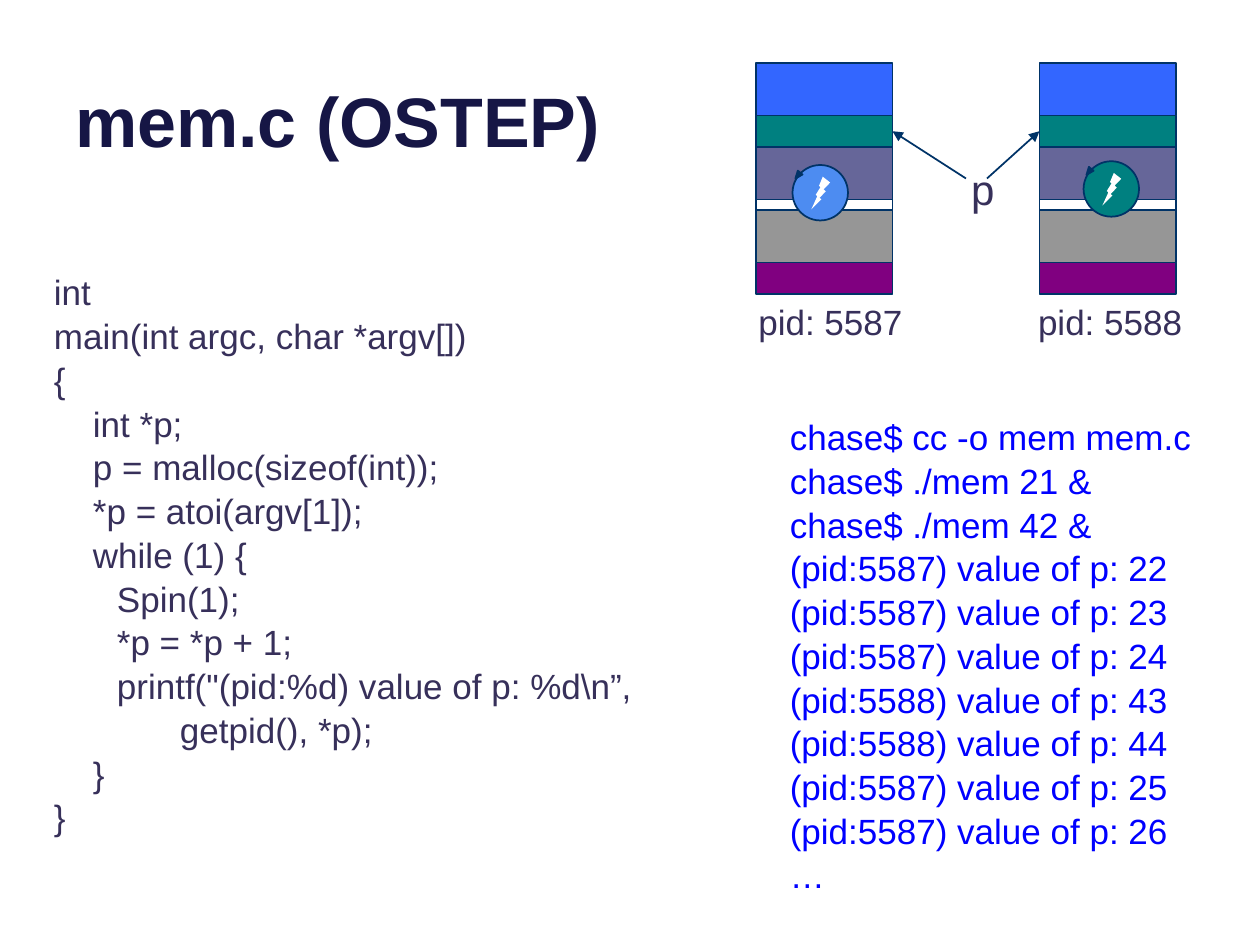
from lxml.etree import SubElement
from pptx import Presentation
from pptx.dml.color import RGBColor
from pptx.enum.shapes import MSO_CONNECTOR, MSO_SHAPE
from pptx.enum.text import MSO_ANCHOR, MSO_AUTO_SIZE
from pptx.oxml.ns import qn
from pptx.util import Inches, Pt

WHITE = RGBColor(0xFF, 0xFF, 0xFF)
TITLE_NAVY = RGBColor(0x16, 0x16, 0x45)
TEXT_PURPLE = RGBColor(0x37, 0x30, 0x5A)
OUTPUT_BLUE = RGBColor(0x00, 0x00, 0xFF)
OUTLINE = RGBColor(0x00, 0x33, 0x67)
BLUE = RGBColor(0x33, 0x66, 0xFF)
TEAL = RGBColor(0x00, 0x80, 0x80)
SLATE = RGBColor(0x66, 0x66, 0x99)
GREY = RGBColor(0x96, 0x96, 0x96)
PURPLE = RGBColor(0x80, 0x00, 0x80)
SKY = RGBColor(0x4D, 0x8C, 0xF1)

CELL = 1 / 12  # the diagram's grid, in inches
SEGMENTS = [(5, BLUE), (3, TEAL), (5, SLATE), (1, WHITE), (5, GREY), (3, PURPLE)]
HEAP = 1  # index of the segment that p points to

TITLE = {"size": Pt(40), "bold": True}
BODY = {"size": Pt(20)}
POINTER = {"size": Pt(24)}

CODE = [  # left indent in inches, text
    (0, "int"),
    (0, "main(int argc, char *argv[])"),
    (0, "{"),
    (0.31, "int *p;"),
    (0.31, "p = malloc(sizeof(int));"),
    (0.31, "*p = atoi(argv[1]);"),
    (0.31, "while (1) {"),
    (0.5, "Spin(1);"),
    (0.5, "*p = *p + 1;"),
    (0.5, "printf(\"(pid:%d) value of p: %d\\n”,"),
    (1, "getpid(), *p);"),
    (0.31, "}"),
    (0, "}"),
]
COMMANDS = ["cc -o mem mem.c", "./mem 21 &", "./mem 42 &"]
VALUES = [(5587, 22), (5587, 23), (5587, 24), (5588, 43), (5588, 44), (5587, 25), (5587, 26)]
OUTPUT = [
    *((0, f"chase$ {command}") for command in COMMANDS),
    *((0, f"(pid:{pid}) value of p: {value}") for pid, value in VALUES),
    (0, "…"),
]


def add_text(page, box, lines, style, color, wrap=True, anchor=MSO_ANCHOR.TOP):
    """Write (indent, text) lines, one paragraph each."""
    frame = page.shapes.add_textbox(*map(Inches, box)).text_frame
    layout = {
        "word_wrap": wrap,
        "vertical_anchor": anchor,
        "auto_size": MSO_AUTO_SIZE.NONE if wrap else MSO_AUTO_SIZE.SHAPE_TO_FIT_TEXT,
    }
    for name, value in layout.items():
        setattr(frame, name, value)
    for index, (indent, text) in enumerate(lines):
        para = frame.add_paragraph() if index else frame.paragraphs[0]
        para.space_before = Pt(1)
        if indent:
            para._p.get_or_add_pPr().set("marL", str(Inches(indent)))
        span = para.add_run()
        span.text = text
        for name, value in {"name": "Arial", **style}.items():
            setattr(span.font, name, value)
        span.font.color.rgb = color


def add_figure(shapes, kind, box, fill, outlined=True):
    figure = shapes.add_shape(kind, *map(Inches, box))
    figure.shadow.inherit = False
    figure.fill.solid()
    figure.fill.fore_color.rgb = fill
    if outlined:
        figure.line.color.rgb = OUTLINE
        figure.line.width = Pt(1)
    else:
        figure.line.fill.background()
    return figure


def add_memory(page, box):
    """Stack the segments in the box and return the heap segment."""
    left, top, width, height = box
    row = height / sum(rows for rows, _ in SEGMENTS)
    segments = []
    for rows, color in SEGMENTS:
        part = (left, top, width, rows * row)
        segments.append(add_figure(page.shapes, MSO_SHAPE.FLOWCHART_PROCESS, part, color))
        top += rows * row
    return segments[HEAP]


def add_thread(page, box, color):
    """Draw a running thread: a disc with a bolt and a rotation arrowhead."""
    left, top, size, _ = box
    shapes = page.shapes.add_group_shape().shapes

    def place(x, y, width, height):
        return left + x * size, top + y * size, width * size, height * size

    add_figure(shapes, MSO_SHAPE.OVAL, box, color)
    bolt = add_figure(shapes, MSO_SHAPE.LIGHTNING_BOLT, place(0.34, 0.21, 0.34, 0.59), WHITE, False)
    bolt._element.spPr.find(qn("a:xfrm")).set("flipH", "1")
    head = add_figure(shapes, MSO_SHAPE.ISOSCELES_TRIANGLE, place(0.04, 0.12, 0.11, 0.14), OUTLINE)
    head.rotation = 219


def add_arrow(page, start, target, site):
    arrow = page.shapes.add_connector(MSO_CONNECTOR.STRAIGHT, *map(Inches, start * 2))
    arrow.end_connect(target, site)
    arrow.line.color.rgb = OUTLINE
    arrow.line.width = Pt(1)
    properties = arrow._element.spPr
    SubElement(properties.find(qn("a:ln")), qn("a:tailEnd"), type="triangle")
    SubElement(properties, qn("a:effectLst"))


def add_processes(page, box):
    """Draw two address spaces side by side, with p pointing into both heaps."""
    left, top, width, height = box
    column = 13 * CELL
    processes = [  # memory left, thread offset, thread colour, label offset, pid, arrow start, site
        (left, (0.29, 0.81), SKY, -0.08, 5587, 20, 3),
        (left + width - column, (0.35, 0.78), TEAL, -0.11, 5588, 22, 1),
    ]
    for x, (dx, dy), color, label, pid, start, site in processes:
        heap = add_memory(page, (x, top, column, height))
        add_thread(page, (x + dx, top + dy, 0.44, 0.44), color)
        add_arrow(page, (left + start * CELL, top + 11 * CELL), heap, site)
        add_text(page, (x + label, top + height, 1.36, 0.44),
                 [(0, f"pid: {pid}")], BODY, TEXT_PURPLE, wrap=False)
    add_text(page, (left + 1.61, top + 9 * CELL, 0.39, 0.5),
             [(0, "p")], POINTER, TEXT_PURPLE, wrap=False)


def main():
    deck = Presentation()
    deck.slide_width, deck.slide_height = Inches(10), Inches(7.5)
    page = deck.slides.add_slide(deck.slide_layouts[6])
    add_text(page, (0.5, -0.37, 9, 1.7), [(0, "mem.c (OSTEP)")], TITLE, TITLE_NAVY,
             anchor=MSO_ANCHOR.BOTTOM)
    add_text(page, (0.33, 2.1, 5.83, 4.48), CODE, BODY, TEXT_PURPLE)
    add_text(page, (6.17, 3.25, 5, 3.8), OUTPUT, BODY, OUTPUT_BLUE)
    add_processes(page, (6, 0.5, 40 * CELL, 22 * CELL))
    deck.save("out.pptx")


if __name__ == "__main__":
    main()
